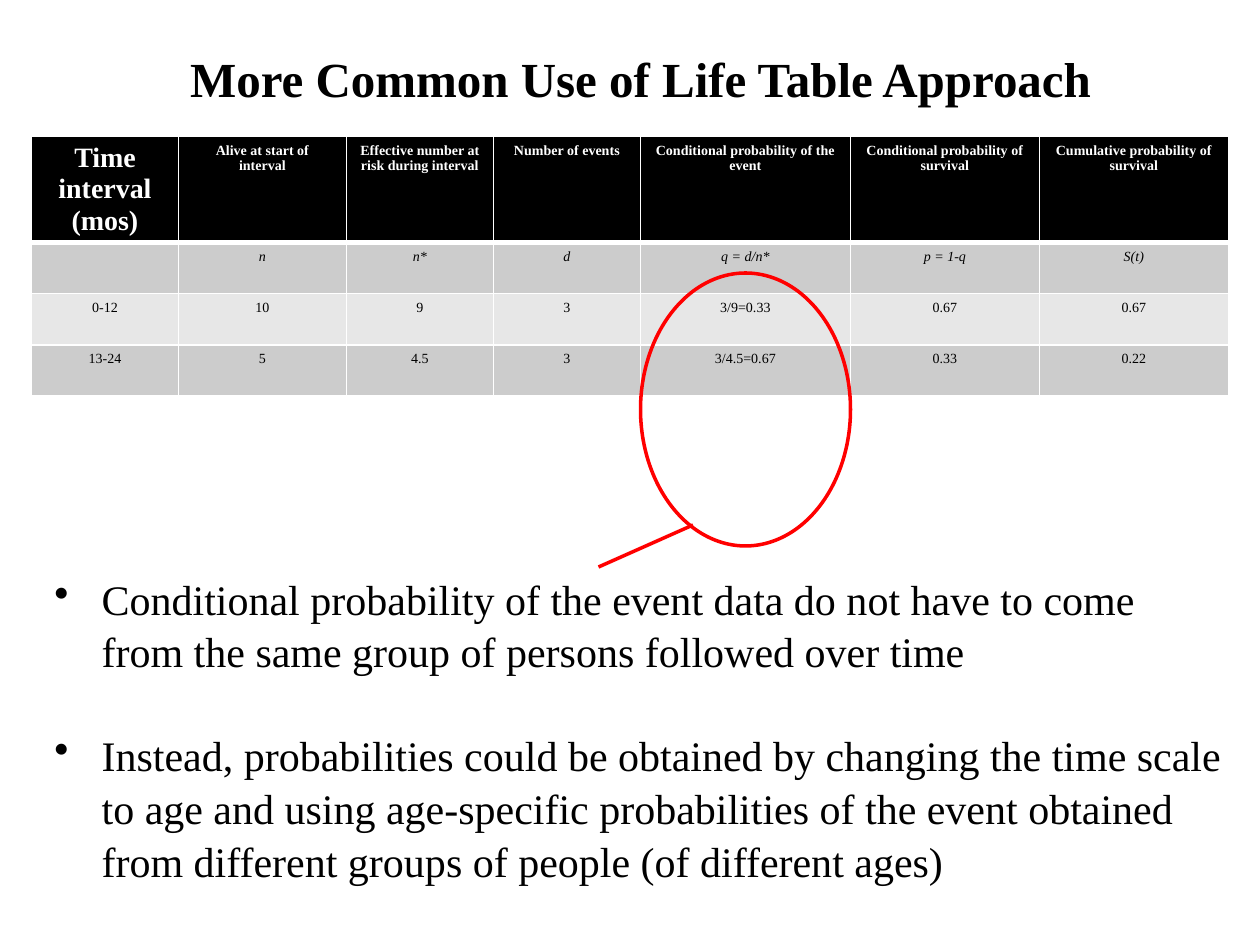
from dataclasses import dataclass

from lxml.etree import SubElement
from pptx import Presentation
from pptx.dml.color import RGBColor
from pptx.enum.shapes import MSO_CONNECTOR, MSO_SHAPE
from pptx.enum.text import PP_ALIGN
from pptx.oxml import parse_xml
from pptx.oxml.ns import nsdecls, qn
from pptx.util import Pt


@dataclass(frozen=True)
class Theme:
    font: str = "Times New Roman"
    black: str = "000000"
    white: str = "FFFFFF"
    red: str = "FF0000"
    dark_band: str = "CCCCCC"
    light_band: str = "E7E7E7"
    title_size: float = 28
    body_size: float = 24
    first_header_size: float = 16
    cell_size: float = 8
    mark_width: float = 2
    thin_border: float = 1
    thick_border: float = 3


THEME = Theme()

COLUMN_WIDTHS = [84, 96, 84, 84, 120, 108, 108]
HEADER_HEIGHT = 60
ROW_HEIGHT = 29.25
ROWS = [
    ["Time interval (mos)", "Alive at start of interval",
     "Effective number at risk during interval", "Number of events",
     "Conditional probability of the event",
     "Conditional probability of survival",
     "Cumulative probability of survival"],
    ["", "n", "n*", "d", "q = d/n*", "p = 1-q", "S(t)"],
    ["0-12", "10", "9", "3", "3/9=0.33", "0.67", "0.67"],
    ["13-24", "5", "4.5", "3", "3/4.5=0.67", "0.33", "0.22"],
]
BULLETS = [
    "Conditional probability of the event data do not have to come from the "
    "same group of persons followed over time",
    "Instead, probabilities could be obtained by changing the time scale to "
    "age and using age-specific probabilities of the event obtained from "
    "different groups of people (of different ages)",
]


def write(para, text, *, size, color=THEME.black, bold=False, italic=False,
          align=PP_ALIGN.LEFT):
    para.alignment = align
    span = para.add_run()
    span.text = text
    span.font.name = THEME.font
    span.font.size = Pt(size)
    span.font.bold = bold
    span.font.italic = italic
    span.font.color.rgb = RGBColor.from_string(color)


def add_text_box(page, left, top, width, height):
    box = page.shapes.add_textbox(Pt(left), Pt(top), Pt(width), Pt(height))
    box.text_frame.word_wrap = True
    return box.text_frame


def set_bullet(para, indent):
    properties = para._p.get_or_add_pPr()
    properties.set("marL", str(Pt(indent)))
    properties.set("indent", str(-Pt(indent)))
    SubElement(properties, qn("a:buChar")).set("char", "•")


def set_borders(cell, **widths):
    """Draw white cell edges; keywords L, R, T and B give widths in points."""
    properties = cell._tc.get_or_add_tcPr()
    for position, (side, width) in enumerate(widths.items()):
        properties.insert(position, parse_xml(
            f'<a:ln{side} {nsdecls("a")} w="{Pt(width)}"><a:solidFill>'
            f'<a:srgbClr val="{THEME.white}"/></a:solidFill></a:ln{side}>'))


def style_cell(cell, text, row, column):
    header = row == 0
    if header:
        fill = THEME.black
    else:
        fill = THEME.dark_band if row % 2 else THEME.light_band
    cell.fill.solid()
    cell.fill.fore_color.rgb = RGBColor.from_string(fill)
    thin, thick = THEME.thin_border, THEME.thick_border
    set_borders(cell, L=thin, R=thin, T=thick if row == 1 else thin,
                B=thick if header else thin)
    if text:
        large = header and column == 0
        write(cell.text_frame.paragraphs[0], text,
              size=THEME.first_header_size if large else THEME.cell_size,
              color=THEME.white if header else THEME.black,
              bold=header, italic=row == 1, align=PP_ALIGN.CENTER)


def add_life_table(page, left, top):
    height = HEADER_HEIGHT + ROW_HEIGHT * (len(ROWS) - 1)
    table = page.shapes.add_table(
        len(ROWS), len(COLUMN_WIDTHS), Pt(left), Pt(top),
        Pt(sum(COLUMN_WIDTHS)), Pt(height)).table
    for column, width in zip(table.columns, COLUMN_WIDTHS):
        column.width = Pt(width)
    for row, texts in enumerate(ROWS):
        table.rows[row].height = Pt(ROW_HEIGHT if row else HEADER_HEIGHT)
        for column, text in enumerate(texts):
            style_cell(table.cell(row, column), text, row, column)


def add_bullets(page, left, top, width, height):
    frame = add_text_box(page, left, top, width, height)
    for number, text in enumerate(BULLETS):
        para = frame.add_paragraph() if number else frame.paragraphs[0]
        write(para, text, size=THEME.body_size)
        para.line_spacing = 1.05
        para.space_before = Pt(29 if number else 0)
        set_bullet(para, 27)


def style_mark(line):
    line.color.rgb = RGBColor.from_string(THEME.red)
    line.width = Pt(THEME.mark_width)


def add_ring(page, left, top, width, height):
    ring = page.shapes.add_shape(
        MSO_SHAPE.OVAL, Pt(left), Pt(top), Pt(width), Pt(height))
    ring.shadow.inherit = False
    ring.fill.background()
    style_mark(ring.line)


def add_pointer(page, start, end):
    pointer = page.shapes.add_connector(
        MSO_CONNECTOR.STRAIGHT, *map(Pt, start + end))
    style_mark(pointer.line)
    SubElement(pointer._element.spPr, qn("a:effectLst"))


def main():
    deck = Presentation()
    deck.slide_width, deck.slide_height = Pt(720), Pt(540)
    page = deck.slides.add_slide(deck.slide_layouts[6])

    add_life_table(page, 18, 78)
    title = add_text_box(page, 24, 24, 684, 41)
    write(title.paragraphs[0], "More Common Use of Life Table Approach",
          size=THEME.title_size, bold=True, align=PP_ALIGN.CENTER)
    add_bullets(page, 24, 322.5, 684, 205)
    add_ring(page, 366, 156, 120, 156)
    add_pointer(page, (342, 324), (396, 300))

    deck.save("out.pptx")


if __name__ == "__main__":
    main()
